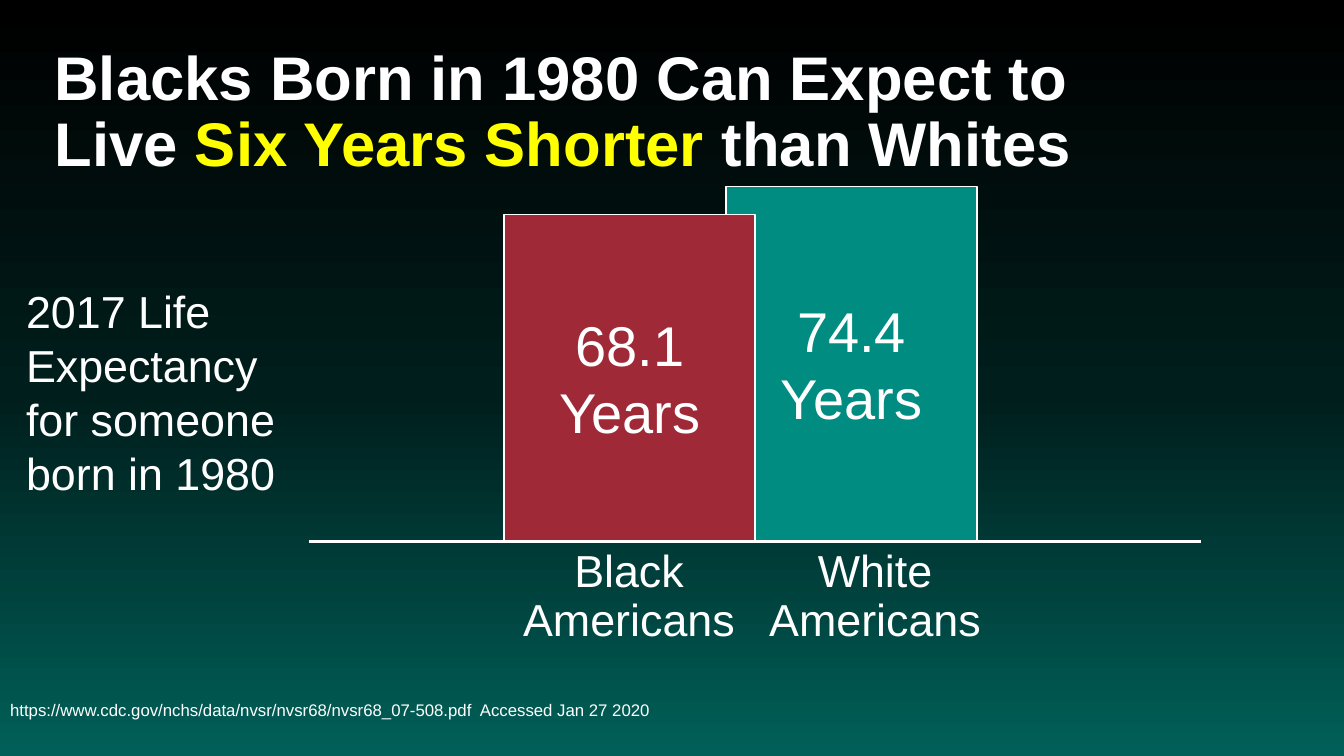
from copy import deepcopy

from lxml.etree import SubElement
from pptx import Presentation
from pptx.dml.color import RGBColor
from pptx.enum.shapes import MSO_CONNECTOR, MSO_SHAPE
from pptx.enum.text import MSO_ANCHOR, MSO_AUTO_SIZE, PP_ALIGN
from pptx.oxml.ns import qn
from pptx.util import Inches, Pt

WIDTH, HEIGHT = 13.33, 7.5
WHITE, YELLOW = "FFFFFF", "FFFF00"
BASELINE = 5.37
BAR_WIDTH = 2.49
LABEL_WIDTH, LABEL_HEIGHT = 2.96, 1.07


def color(value):
    """Turn a hex string into a color."""
    return RGBColor.from_string(value)


def inches(box):
    """Convert left, top, width and height to lengths."""
    return [Inches(length) for length in box]


def format_paragraph(para, size, align=PP_ALIGN.LEFT, spacing=1.0, after=0, bold=False):
    """Set the font, alignment and spacing of a paragraph."""
    para.alignment = align
    para.line_spacing = spacing
    para.space_before, para.space_after = Pt(0), Pt(after)
    para.font.name, para.font.size, para.font.bold = "Arial", Pt(size), bold
    para.font.color.rgb = color(WHITE)


def place(holder, box):
    """Move a placeholder to a box and return its first paragraph."""
    holder.left, holder.top, holder.width, holder.height = inches(box)
    frame = holder.text_frame
    frame.auto_size = MSO_AUTO_SIZE.NONE
    frame.vertical_anchor = MSO_ANCHOR.MIDDLE
    return frame.paragraphs[0]


def paint_background(page):
    """Fill the page with a vertical gradient of three colors."""
    fill = page.background.fill
    fill.gradient()
    fill.gradient_angle = 270
    first = fill.gradient_stops[0]._gs
    first.addnext(deepcopy(first))
    stops = [(0, "000000"), (0.52, "001E1C"), (1, "006059")]
    for stop, (position, value) in zip(fill.gradient_stops, stops):
        stop.position = position
        stop.color.rgb = color(value)


def add_title(page, box):
    """Write the two-line title with its highlighted phrase."""
    para = place(page.shapes.title, box)
    format_paragraph(para, 44, spacing=0.9, bold=True)
    para.add_run().text = "Blacks Born in 1980 Can Expect to "
    para.add_line_break()
    para.add_run().text = "Live "
    span = para.add_run()
    span.text = "Six Years Shorter "
    span.font.color.rgb = color(YELLOW)
    para.add_run().text = "than Whites"


def add_source(page, box):
    """Write the source line in the body placeholder."""
    para = place(page.placeholders[1], box)
    properties = para._p.get_or_add_pPr()
    properties.set("marL", "0")
    properties.set("indent", "0")
    SubElement(properties, qn("a:buNone"))
    format_paragraph(para, 12)
    para.add_run().text = (
        "https://www.cdc.gov/nchs/data/nvsr/nvsr68/nvsr68_07-508.pdf  Accessed Jan 27 2020"
    )


def add_text(page, box, text, **style):
    """Add a wrapped text box at 32 points."""
    frame = page.shapes.add_textbox(*inches(box)).text_frame
    frame.word_wrap = True
    para = frame.paragraphs[0]
    para.text = text
    format_paragraph(para, 32, **style)


def add_bar(page, box, text, fill):
    """Add a bar with its value in the middle."""
    bar = page.shapes.add_shape(MSO_SHAPE.RECTANGLE, *inches(box))
    bar.shadow.inherit = False
    bar.fill.solid()
    bar.fill.fore_color.rgb = color(fill)
    bar.line.color.rgb = color(WHITE)
    bar.line.width = Pt(1)
    frame = bar.text_frame
    frame.word_wrap = True
    frame.vertical_anchor = MSO_ANCHOR.MIDDLE
    frame.text = text
    format_paragraph(frame.paragraphs[0], 40, align=PP_ALIGN.CENTER)


def add_axis(page, left, right, top):
    """Draw the line on which the bars stand."""
    axis = page.shapes.add_connector(
        MSO_CONNECTOR.STRAIGHT, *inches((left, top, right, top))
    )
    axis.line.color.rgb = color(WHITE)
    axis.line.width = Pt(2.25)
    SubElement(axis._element.spPr, qn("a:effectLst"))


def add_comparison(page, left, right, baseline):
    """Draw the two bars, the axis and the group names."""
    bars = [
        (7.2, 3.52, "74.4 Years", "008C81"),
        (5, 3.24, "68.1 Years", "9F2936"),
    ]
    for bar_left, height, text, fill in bars:
        add_bar(page, (bar_left, baseline - height, BAR_WIDTH, height), text, fill)
    add_axis(page, left, right, baseline)
    for label_left, text in [(4.76, "Black Americans"), (7.2, "White Americans")]:
        box = (label_left, baseline + 0.03, LABEL_WIDTH, LABEL_HEIGHT)
        add_text(page, box, text, align=PP_ALIGN.CENTER, spacing=0.9)


def main():
    """Build and save the deck."""
    deck = Presentation()
    deck.slide_width, deck.slide_height = Inches(WIDTH), Inches(HEIGHT)
    page = deck.slides.add_slide(deck.slide_layouts[1])
    paint_background(page)
    add_title(page, (0.44, 0.4, 12.66, 1.45))
    add_source(page, (0, 6.58, 9, 0.92))
    add_text(
        page,
        (0.16, 2.77, 2.9, 2.26),
        "2017 Life Expectancy for someone born in 1980",
        after=12,
    )
    add_comparison(page, 3.06, 11.91, BASELINE)
    deck.save("out.pptx")


if __name__ == "__main__":
    main()
